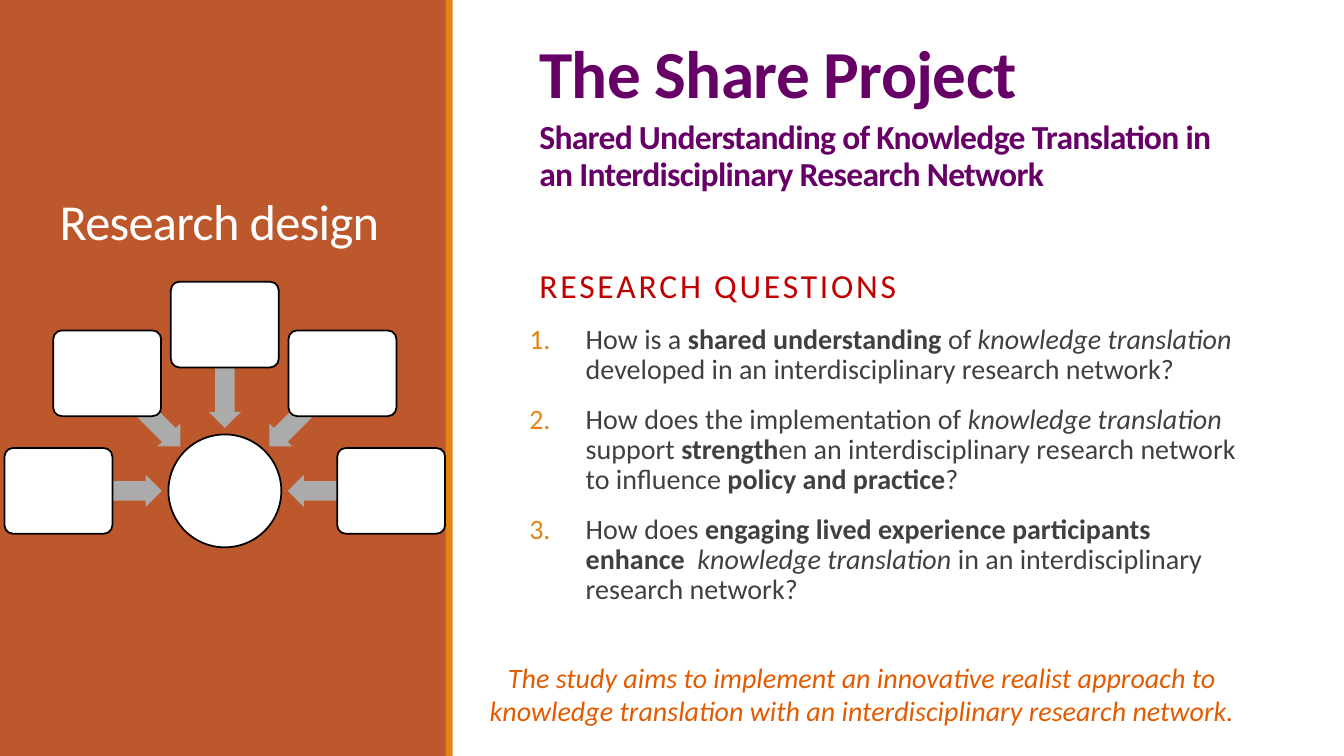
from math import cos, radians, sin

from pptx import Presentation
from pptx.dml.color import RGBColor
from pptx.enum.shapes import MSO_SHAPE as SHAPE
from pptx.enum.text import MSO_ANCHOR as ANCHOR, MSO_AUTO_SIZE as AUTO, PP_ALIGN as ALIGN
from pptx.oxml.ns import qn
from pptx.util import Pt

PX = 9144  # 100 px to the inch
COLORS = {
    "panel": "BD582C", "stripe": "E48312", "white": "FFFFFF", "black": "000000",
    "arrow": "ABABAB", "purple": "660066", "red": "C00000", "body": "404040",
    "aim": "E25B00",
}


def add_shape(shapes, kind, x, y, w, h, fill, outlined=False):
    sp = shapes.add_shape(kind, *(round(v * PX) for v in (x, y, w, h)))
    sp.shadow.inherit = False
    sp.fill.solid()
    sp.fill.fore_color.rgb = RGBColor.from_string(COLORS[fill])
    if outlined:
        sp.line.color.rgb = RGBColor.from_string(COLORS["black"])
        sp.line.width = Pt(1.25)
    else:
        sp.line.fill.background()
    return sp


def add_run(p, text, size, color, style="", spacing=0):
    """Add a run; style holds "b" for bold and "i" for italic, spacing is in points."""
    r = p.add_run()
    r.text = text
    r.font.name = "Calibri"
    r.font.size = Pt(size)
    r.font.bold = "b" in style
    r.font.italic = "i" in style
    r.font.color.rgb = RGBColor.from_string(COLORS[color])
    if spacing:
        r.font._element.set("spc", str(round(spacing * 100)))


prs = Presentation()
prs.slide_width, prs.slide_height = 1333 * PX, 750 * PX
s = prs.slides.add_slide(prs.slide_layouts[5])

# Side panel
add_shape(s.shapes, SHAPE.RECTANGLE, 0, 0, 443, 750, "panel")
add_shape(s.shapes, SHAPE.RECTANGLE, 442, 0, 7, 750, "stripe")

# Headings
title = s.shapes.title
title.left, title.top, title.width, title.height = (v * PX for v in (49, 184, 350, 70))
project = s.shapes.add_textbox(525 * PX, 15 * PX, 565 * PX, 101 * PX)
for sp, text, size, color, style in (
    (title, "Research design", 36, "white", ""),
    (project, "The Share Project", 48, "purple", "b"),
):
    tf = sp.text_frame
    tf.word_wrap = True
    tf.auto_size = AUTO.NONE
    tf.vertical_anchor = ANCHOR.BOTTOM
    p = tf.paragraphs[0]
    p.alignment = ALIGN.LEFT
    p.line_spacing = 0.85
    add_run(p, text, size, color, style, -0.5)

# Subtitle and research questions
questions = [
    [("How is a ", ""), ("shared understanding ", "b"), ("of ", ""),
     ("knowledge translation ", "i"),
     ("developed in an interdisciplinary research network?", "")],
    [("How does the implementation of ", ""), ("knowledge translation ", "i"),
     ("support ", ""), ("strength", "b"),
     ("en an interdisciplinary research network to influence ", ""),
     ("policy and practice", "b"), ("?", "")],
    [("How does ", ""), ("engaging lived experience participants enhance  ", "b"),
     ("knowledge translation", "i"),
     (" in an interdisciplinary research network?", "")],
]
tf = s.shapes.add_textbox(525 * PX, 115 * PX, 710 * PX, 574 * PX).text_frame
tf.word_wrap = True
tf.margin_left = tf.margin_right = 0
subtitle = tf.paragraphs[0]
add_run(subtitle, "Shared Understanding of Knowledge Translation in "
        "an Interdisciplinary Research Network", 24, "purple", "b", -0.5)
heading = tf.add_paragraph()
heading.space_before = Pt(52)
add_run(heading, "RESEARCH QUESTIONS", 24, "red", "", 2)
for p in (subtitle, heading):
    p._p.get_or_add_pPr().set("marL", str(10 * PX))
for question in questions:
    p = tf.add_paragraph()
    p.space_before = Pt(12)
    pPr = p._p.get_or_add_pPr()
    pPr.set("marL", str(56 * PX))
    pPr.set("indent", str(-56 * PX))
    color = pPr.makeelement(qn("a:buClr"), {})
    color.append(color.makeelement(qn("a:srgbClr"), {"val": COLORS["stripe"]}))
    pPr.append(color)
    pPr.append(pPr.makeelement(qn("a:buFont"), {"typeface": "Calibri"}))
    pPr.append(pPr.makeelement(qn("a:buAutoNum"), {"type": "arabicPeriod"}))
    for text, style in question:
        add_run(p, text, 20, "body", style)
for p in tf.paragraphs:
    p.line_spacing = 0.9
    p.space_after = Pt(2)

# Aim
tf = s.shapes.add_textbox(435 * PX, 650 * PX, 840 * PX, 77 * PX).text_frame
tf.word_wrap = True
p = tf.paragraphs[0]
p.alignment = ALIGN.CENTER
add_run(p, "The study aims to implement an innovative realist approach to "
        "knowledge translation with an interdisciplinary research network.", 20, "aim", "i")

# Converging diagram: boxes on an arc, each with an arrow towards the circle
CX, CY = 223, 487
ARROW_RADIUS, BOX_RADIUS = 114, 165
diagram = s.shapes.add_group_shape().shapes
add_shape(diagram, SHAPE.OVAL, CX - 56, CY - 56, 112, 112, "white", True)
for angle in (180, 225, 270, 315, 0):
    dx, dy = cos(radians(angle)), sin(radians(angle))
    arrow = add_shape(diagram, SHAPE.LEFT_ARROW, CX + ARROW_RADIUS * dx - 103 / 2,
                      CY + ARROW_RADIUS * dy - 32 / 2, 103, 32, "arrow")
    arrow.adjustments[0], arrow.adjustments[1] = 0.6, 0.5
    arrow.rotation = angle
    box = add_shape(diagram, SHAPE.ROUNDED_RECTANGLE, CX + BOX_RADIUS * dx - 107 / 2,
                    CY + BOX_RADIUS * dy - 85 / 2, 107, 85, "white", True)
    box.adjustments[0] = 0.1

# The panel lies behind the title
s.shapes._spTree.append(title._element)

prs.save("out.pptx")
